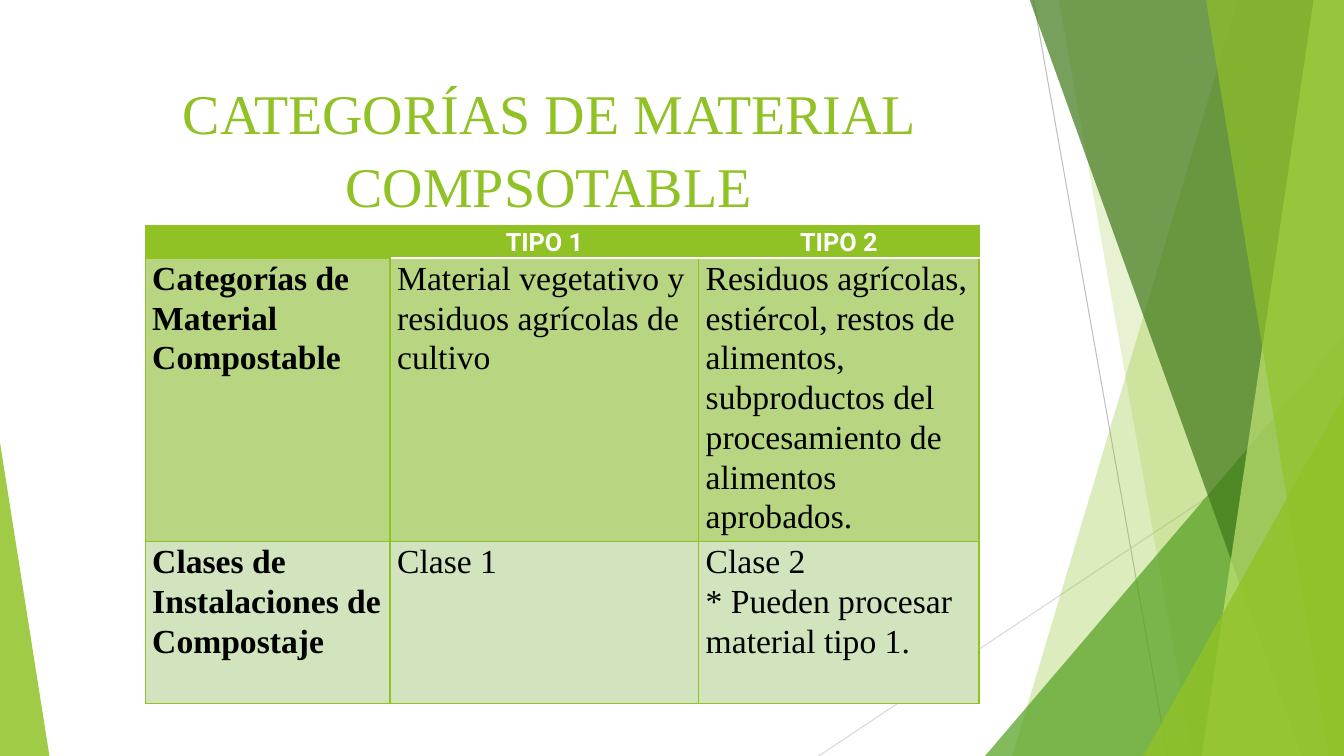
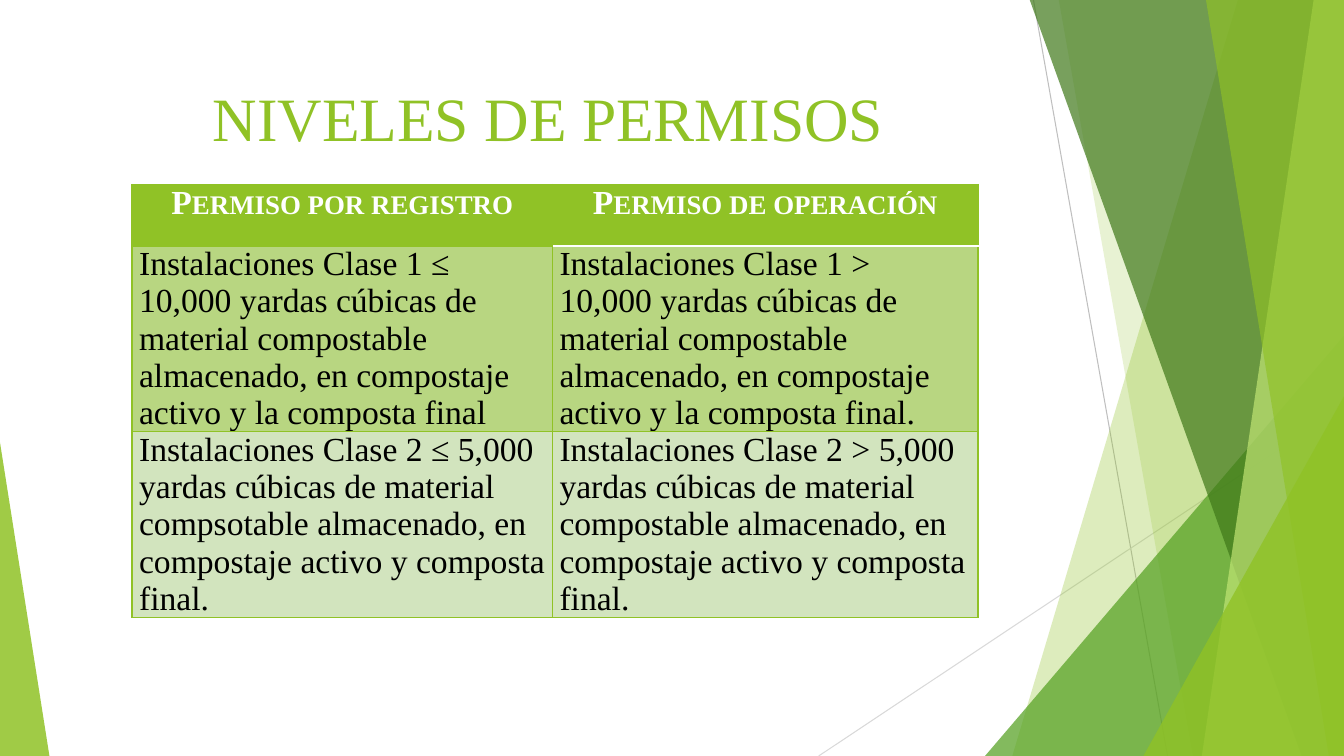
from lxml import etree
from pptx import Presentation
from pptx.dml.color import RGBColor
from pptx.enum.shapes import MSO_CONNECTOR, MSO_SHAPE
from pptx.enum.text import MSO_ANCHOR, MSO_AUTO_SIZE, PP_ALIGN
from pptx.oxml.ns import qn
from pptx.util import Inches, Pt

STRAIGHT = MSO_CONNECTOR.STRAIGHT
TRIANGLE = MSO_SHAPE.ISOSCELES_TRIANGLE
TOP_ANCHOR = MSO_ANCHOR.TOP
NO_FIT = MSO_AUTO_SIZE.NONE
CENTER, LEFT = PP_ALIGN.CENTER, PP_ALIGN.LEFT

WIDTH, HEIGHT, BLEED = 13.33, 7.5, -0.01
GREEN, WHITE, BLACK = "90C226", "FFFFFF", "000000"
ROW_FILLS = [GREEN, "B8D681", "D2E4BE"]
SERIF = "Times New Roman"

RAYS = [
    ((10.25, 0), (11.58, HEIGHT), "BFBFBF"),
    ((WIDTH, 4.03), (8.12, HEIGHT), "D9D9D9"),
]
FACETS = [
    ("band", (12.28, 10.04), GREEN, 30),
    ("band", (10.5, 11.83), GREEN, 20),
    ("triangle", (9.77, 3.33, 3.56, 1), "54A021", 72),
    ("band", (10.21, 12.91), "3F7819", 70),
    ("band", (13.03, 11.92), "C0E474", 70),
    ("band", (11.96, 13.18), GREEN, 65),
    ("triangle", (11.34, 3.93, 1.99, 1), GREEN, 80),
    ("triangle", (0, 4.39, 0.49, 0), GREEN, 85),
]

SLIDES = [
    {
        "title": "CATEGORÍAS DE MATERIAL COMPSOTABLE",
        "title_size": 40, "title_height": 1.13,
        "at": (1.44, 2.24),
        "cols": [2.43, 3.06, 2.78], "rows": [0.32, 2.81, 1.61],
        "spacing": 1.07, "label_column": True,
        "header": {"size": 18, "font": "Roboto", "small_caps": False},
        "cells": [
            ["", "TIPO 1", "TIPO 2"],
            ["Categorías de Material Compostable",
             "Material vegetativo y residuos agrícolas de cultivo",
             "Residuos agrícolas, estiércol, restos de alimentos, subproductos "
             "del procesamiento de alimentos aprobados."],
            ["Clases de Instalaciones de Compostaje",
             "Clase 1",
             "Clase 2\n* Pueden procesar material tipo 1."],
        ],
    },
    {
        "title": "NIVELES DE PERMISOS",
        "title_size": 44, "title_height": 1.44,
        "at": (1.31, 1.83),
        "cols": [4.17, 4.22], "rows": [0.61, 1.84, 1.84],
        "spacing": 1.0, "label_column": False,
        "header": {"size": 24, "font": SERIF, "small_caps": True},
        "cells": [
            ["Permiso por registro", "Permiso de operación"],
            ["Instalaciones Clase 1 ≤ 10,000 yardas cúbicas de material "
             "compostable almacenado, en compostaje activo y la composta final",
             "Instalaciones Clase 1 > 10,000 yardas cúbicas de material "
             "compostable almacenado, en compostaje activo y la composta final."],
            ["Instalaciones Clase 2 ≤ 5,000 yardas cúbicas de material "
             "compsotable almacenado, en compostaje activo y composta final.",
             "Instalaciones Clase 2 > 5,000 yardas cúbicas de material "
             "compostable almacenado, en compostaje activo y composta final."],
        ],
    },
]


def rgb(value):
    return RGBColor.from_string(value)


def format_run(r, size, font, color, bold=False, small_caps=False):
    r.font.size = Pt(size)
    r.font.name = font
    r.font.color.rgb = rgb(color)
    r.font.bold = bold
    if small_caps:
        r._r.get_or_add_rPr().set("cap", "small")


def add_ray(s, start, end, color):
    line = s.shapes.add_connector(
        STRAIGHT, *(Inches(v) for v in (*start, *end)))
    line.line.color.rgb = rgb(color)
    line.line.width = Pt(0.75)
    etree.SubElement(line._element.spPr, qn("a:effectLst"))
    return line


def add_facet(s, kind, geometry, color, opacity):
    if kind == "band":
        top_x, bottom_x = geometry
        points = [(top_x, BLEED), (WIDTH, BLEED), (WIDTH, HEIGHT), (bottom_x, HEIGHT)]
        points = [(Inches(x), Inches(y)) for x, y in points]
        builder = s.shapes.build_freeform(*points[0])
        builder.add_line_segments(points[1:], close=True)
        sp = builder.convert_to_shape()
    else:
        x, y, w, apex = geometry
        sp = s.shapes.add_shape(
            TRIANGLE, Inches(x), Inches(y), Inches(w), Inches(HEIGHT - y))
        sp.adjustments[0] = apex
    sp.shadow.inherit = False
    sp.line.fill.background()
    sp.fill.solid()
    sp.fill.fore_color.rgb = rgb(color)
    tint = sp._element.spPr.find(qn("a:solidFill"))[0]
    etree.SubElement(tint, qn("a:alpha")).set("val", str(opacity * 1000))
    return sp


def decorate_layout(layout, s):
    parts = [add_ray(s, *ray) for ray in RAYS]
    parts += [add_facet(s, *facet) for facet in FACETS]
    for i, part in enumerate(parts):
        part._element.xpath(".//p:cNvPr")[0].set("id", str(100 + i))
        layout.shapes._spTree.insert(2 + i, part._element)


def set_title(s, text, size, height):
    sp = s.shapes.title
    sp.left, sp.top = Inches(0.74), Inches(0.67)
    sp.width, sp.height = Inches(9.4), Inches(height)
    tf = sp.text_frame
    tf.text = text
    tf.word_wrap = True
    tf.auto_size = NO_FIT
    tf.vertical_anchor = TOP_ANCHOR
    tf.margin_top = Inches(0.06)
    p = tf.paragraphs[0]
    p.alignment = CENTER
    p.line_spacing = 1.08
    format_run(p.runs[0], size, SERIF, GREEN)


def set_borders(cell, borders):
    props = cell._tc.get_or_add_tcPr()
    for i, side in enumerate("LRTB"):
        color, width = borders[side]
        ln = etree.Element(qn("a:ln" + side), w=str(Pt(width)))
        fill = etree.SubElement(ln, qn("a:solidFill"))
        etree.SubElement(fill, qn("a:srgbClr"), val=color)
        props.insert(i, ln)


def cell_borders(row, col):
    borders = dict.fromkeys("LRTB", (GREEN, 1))
    if col > 0 and row < 2:
        borders["B" if row == 0 else "T"] = (WHITE, 1.5)
    if row > 0 and col < 2:
        borders["R" if col == 0 else "L"] = (GREEN, 1.5)
    return borders


def format_cell(cell, row, col, data):
    cell.text = data["cells"][row][col]
    cell.margin_left = cell.margin_right = Inches(0.07)
    cell.margin_top = cell.margin_bottom = 0
    cell.vertical_anchor = TOP_ANCHOR
    cell.fill.solid()
    cell.fill.fore_color.rgb = rgb(ROW_FILLS[row])
    set_borders(cell, cell_borders(row, col))
    for p in cell.text_frame.paragraphs:
        p.alignment = CENTER if row == 0 else LEFT
        p.line_spacing = data["spacing"]
        for r in p.runs:
            if row == 0:
                format_run(r, color=WHITE, bold=True, **data["header"])
            else:
                format_run(r, 24, SERIF, BLACK, data["label_column"] and col == 0)


def add_grid(s, data):
    cols, rows = data["cols"], data["rows"]
    x, y = data["at"]
    table = s.shapes.add_table(
        len(rows), len(cols), Inches(x), Inches(y),
        Inches(sum(cols)), Inches(sum(rows))).table
    for column, width in zip(table.columns, cols):
        column.width = Inches(width)
    for i, height in enumerate(rows):
        table.rows[i].height = Inches(height)
        for j in range(len(cols)):
            format_cell(table.cell(i, j), i, j, data)


prs = Presentation()
prs.slide_width, prs.slide_height = Inches(WIDTH), Inches(HEIGHT)
title_only = prs.slide_layouts[5]
for number, data in enumerate(SLIDES):
    s = prs.slides.add_slide(title_only)
    if number == 0:
        decorate_layout(title_only, s)
    set_title(s, data["title"], data["title_size"], data["title_height"])
    add_grid(s, data)
prs.save("out.pptx")
